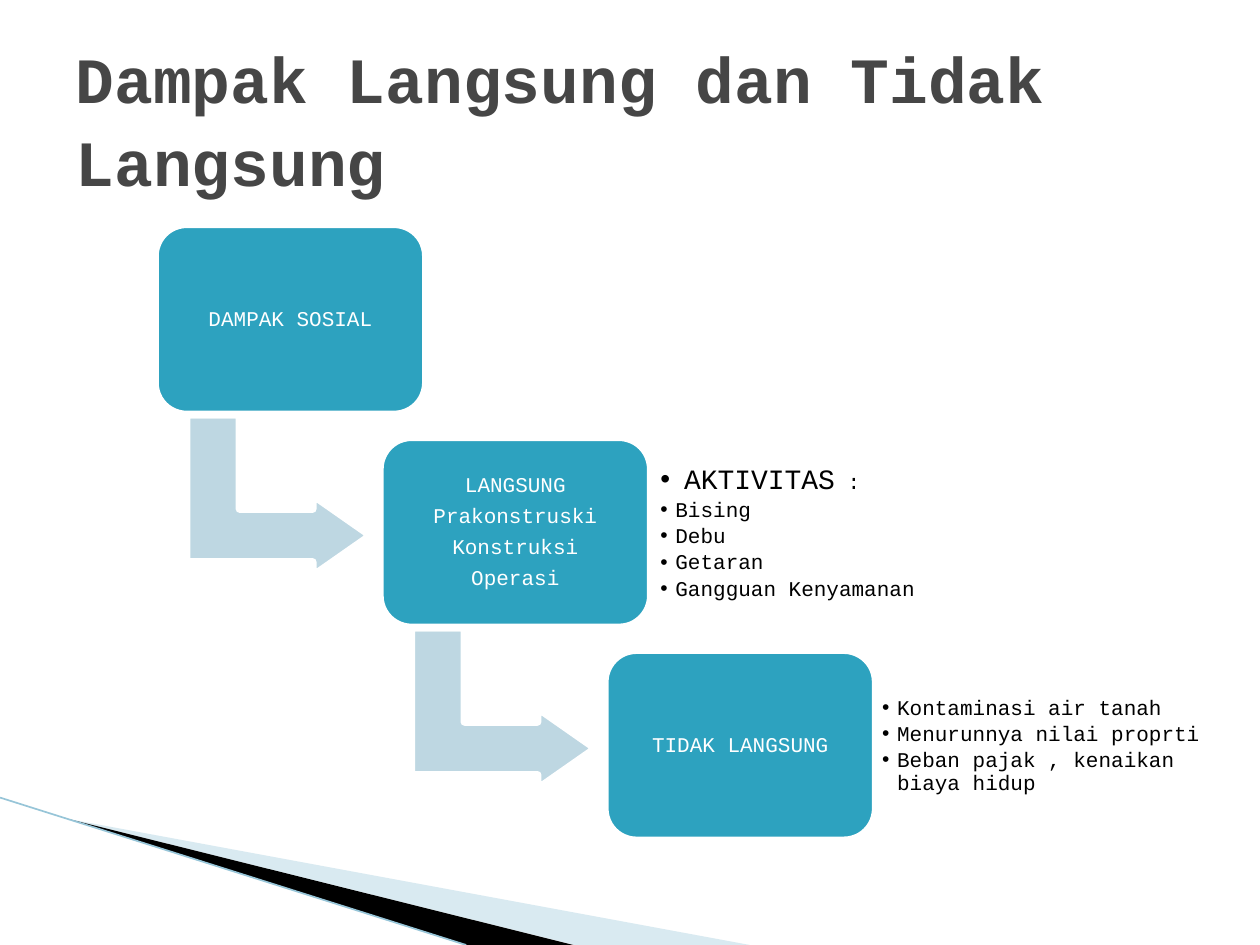
from lxml import etree
from pptx import Presentation
from pptx.dml.color import RGBColor
from pptx.enum.shapes import MSO_CONNECTOR, MSO_SHAPE
from pptx.enum.text import MSO_ANCHOR, MSO_AUTO_SIZE, PP_ALIGN
from pptx.oxml.ns import qn
from pptx.util import Inches, Pt

BENT, ROUND = MSO_SHAPE.BENT_UP_ARROW, MSO_SHAPE.ROUNDED_RECTANGLE
STRAIGHT = MSO_CONNECTOR.STRAIGHT
MIDDLE, NO_FIT = MSO_ANCHOR.MIDDLE, MSO_AUTO_SIZE.NONE
CENTER, LEFT = PP_ALIGN.CENTER, PP_ALIGN.LEFT

WHITE = RGBColor(0xFF, 0xFF, 0xFF)
BLACK = RGBColor(0, 0, 0)
GREY = RGBColor(0x46, 0x46, 0x46)
TEAL = RGBColor(0x2D, 0xA2, 0xBF)
PALE = RGBColor(0xBE, 0xD7, 0xE2)
MIST = RGBColor(0xA0, 0xCB, 0xDC)
EDGE = RGBColor(0x97, 0xC5, 0xD8)
FACE = "Courier New"

TITLE = "Dampak Langsung dan Tidak Langsung"
STEPS = [
    ["DAMPAK SOSIAL"],
    ["LANGSUNG", "Prakonstruski", "Konstruksi", "Operasi"],
    ["TIDAK LANGSUNG"],
]
# Each list item is a row of (text, size) runs.
DIRECT = [[("AKTIVITAS", 16), (" :", 12)]] + [
    [(text, 12)] for text in ("Bising", "Debu", "Getaran", "Gangguan Kenyamanan")
]
INDIRECT = [
    [(text, 12)] for text in (
        "Kontaminasi air tanah",
        "Menurunnya nilai proprti",
        "Beban pajak , kenaikan biaya hidup",
    )
]


def apply(target, values):
    for name, value in values.items():
        setattr(target, name, value)


def style_font(font, size, color, bold=False):
    apply(font, {"name": FACE, "size": Pt(size), "bold": bold})
    font.color.rgb = color


def style_frame(frame, inset):
    margins = {f"margin_{side}": Inches(inset)
               for side in ("left", "top", "right", "bottom")}
    apply(frame, {"word_wrap": True, "auto_size": NO_FIT,
                  "vertical_anchor": MIDDLE, **margins})


def move(shape, box):
    names = ("left", "top", "width", "height")
    apply(shape, dict(zip(names, map(Inches, box))))


def fill_title(shape, box):
    move(shape, box)
    frame = shape.text_frame
    frame.text = TITLE
    apply(frame, {"word_wrap": True, "auto_size": NO_FIT,
                  "vertical_anchor": MIDDLE})
    para = frame.paragraphs[0]
    apply(para, {"alignment": LEFT, "line_spacing": 1.07})
    style_font(para.runs[0].font, 36.9, GREY, True)


def add_wedge(slide, points, color, alpha=None):
    pen = slide.shapes.build_freeform(*map(Inches, points[0]), scale=1.0)
    pen.add_line_segments([tuple(map(Inches, point)) for point in points[1:]])
    wedge = pen.convert_to_shape()
    wedge.shadow.inherit = False
    wedge.fill.solid()
    wedge.fill.fore_color.rgb = color
    wedge.line.fill.background()
    if alpha:
        tint = wedge.fill._xPr.find(qn("a:solidFill"))[0]
        etree.SubElement(tint, qn("a:alpha")).set("val", str(alpha * 1000))


def add_corner(slide, box):
    """Draw the swoosh with its tip at the top left of the box."""
    left, top, width, height = box
    base = top + height
    tip = (left + 0.54, top + 0.17)
    add_wedge(slide, [tip, (left + 5.95, base), (left + 4.56, base)], MIST, 40)
    add_wedge(slide, [tip, (left + 4.55, base), (left + 3.7, base)], BLACK)
    line = slide.shapes.add_connector(
        STRAIGHT, *map(Inches, (left, top, left + 3.7, base)))
    line.line.color.rgb = EDGE
    line.line.width = Pt(0.95)
    etree.SubElement(line._element.spPr, qn("a:effectLst"))


def add_block(slide, kind, box, color, adjust):
    block = slide.shapes.add_shape(kind, *map(Inches, box))
    block.shadow.inherit = False
    block.fill.solid()
    block.fill.fore_color.rgb = color
    block.line.color.rgb = WHITE
    block.line.width = Pt(4.33)
    for i, value in enumerate(adjust):
        block.adjustments[i] = value
    return block


def add_stairs(slide, box):
    """Lay the steps evenly down the diagonal of the box."""
    left, top, width, height = box
    wide, high = 2.15, 1.51
    gaps = len(STEPS) - 1
    across, down = (width - wide) / gaps, (height - high) / gaps
    for i, lines in enumerate(STEPS):
        x, y = left + i * across, top + i * down
        if i < gaps:
            arrow = add_block(slide, BENT, (x + 0.34, y + 1.42, 1.28, 1.46),
                              PALE, (0.328, 0.25, 0.358))
            arrow.rotation = 90
        step = add_block(slide, ROUND, (x, y, wide, high), TEAL, (0.167,))
        frame = step.text_frame
        style_frame(frame, 0.13)
        frame.text = "\n".join(lines)
        for para in frame.paragraphs:
            apply(para, {"alignment": CENTER, "line_spacing": 0.9,
                         "space_after": Pt(4.8)})
            style_font(para.runs[0].font, 12, WHITE)


def fill_list(shape, box, items):
    move(shape, box)
    frame = shape.text_frame
    style_frame(frame, 0.07)
    for i, item in enumerate(items):
        para = frame.paragraphs[0] if i == 0 else frame.add_paragraph()
        apply(para, {"level": 1, "alignment": LEFT, "line_spacing": 0.9,
                     "space_before": Pt(0), "space_after": Pt(2.1)})
        indent = Inches(0.19 if item[0][1] > 12 else 0.12)
        props = para._p.get_or_add_pPr()
        props.set("marL", str(indent))
        props.set("indent", str(-indent))
        etree.SubElement(props, qn("a:buChar")).set("char", "•")
        for text, size in item:
            run = para.add_run()
            run.text = text
            style_font(run.font, size, BLACK)


def main():
    deck = Presentation()
    deck.slide_width, deck.slide_height = Inches(10), Inches(7.5)
    slide = deck.slides.add_slide(deck.slide_layouts[3])
    title, direct, indirect = list(slide.placeholders)[:3]
    for extra in list(slide.placeholders)[3:]:
        extra._element.getparent().remove(extra._element)
    add_corner(slide, (0, 6.33, 5.95, 1.17))
    add_stairs(slide, (1.23, 1.78, 5.72, 4.89))
    fill_title(title, (0.5, 0.3, 9, 1.25))
    fill_list(direct, (5.17, 3.62, 3.43, 1.22), DIRECT)
    fill_list(indirect, (6.93, 5.31, 2.72, 1.22), INDIRECT)
    deck.save("out.pptx")


if __name__ == "__main__":
    main()
